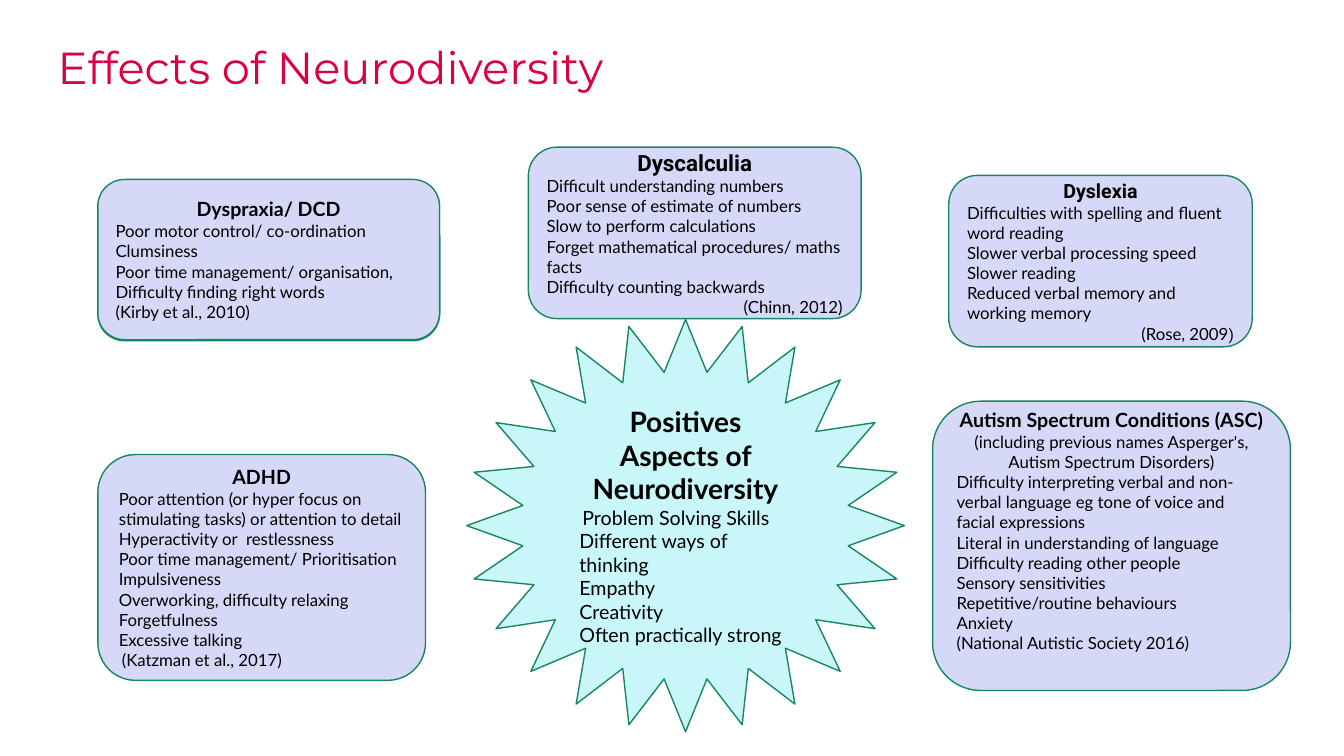
from pptx import Presentation
from pptx.dml.color import RGBColor
from pptx.enum.shapes import MSO_SHAPE
from pptx.enum.text import MSO_ANCHOR, MSO_AUTO_SIZE, PP_ALIGN
from pptx.util import Inches, Pt

LEFT, MID, RIGHT = PP_ALIGN.LEFT, PP_ALIGN.CENTER, PP_ALIGN.RIGHT
ROUND, STAR = MSO_SHAPE.ROUNDED_RECTANGLE, MSO_SHAPE.STAR_24_POINT
TOP, CENTRE = MSO_ANCHOR.TOP, MSO_ANCHOR.MIDDLE
FIXED = MSO_AUTO_SIZE.NONE
WIDTH, HEIGHT = Inches(13.33), Inches(7.5)
LILAC, AQUA, GREEN, EDGE = "D5D9F7", "C8F6F9", "21B782", "188760"
RED, BLACK = "DA0042", "000000"


def paint(hue):
    return RGBColor.from_string(hue)


def place(x, y, w, h):
    """Turn percentages of the slide into lengths."""
    return [round(share * side / 100)
            for share, side in zip((x, y, w, h), (WIDTH, HEIGHT) * 2)]


def add_title(slide, text, area):
    title = slide.shapes.title
    title.left, title.top, title.width, title.height = place(*area)
    frame = title.text_frame
    frame.text = text
    frame.auto_size = FIXED
    frame.vertical_anchor = TOP
    para = frame.paragraphs[0]
    para.alignment, para.line_spacing = LEFT, 1.2
    para.space_before = Pt(10)
    style(para.font, 32, "Montserrat", RED)


def style(font, size, name="Lato", hue=BLACK, bold=False):
    font.size, font.name, font.bold = Pt(size), name, bold
    font.color.rgb = paint(hue)


def add_shape(slide, kind, area, fill):
    shape = slide.shapes.add_shape(kind, *place(*area))
    shape.shadow.inherit = False
    shape.fill.solid()
    shape.fill.fore_color.rgb = paint(fill)
    shape.line.color.rgb = paint(EDGE)
    shape.line.width = Pt(1)
    return shape


def add_line(frame, text, size, align=LEFT):
    para = frame.add_paragraph()
    para.text, para.alignment = text, align
    style(para.font, size)
    return para


def add_card(slide, area, head, lines, kind=ROUND, fill=LILAC,
             sizes=(14, 12), face="Lato"):
    """Draw a shape with a bold heading and a list; return its text frame."""
    frame = add_shape(slide, kind, area, fill).text_frame
    frame.word_wrap = True
    frame.vertical_anchor = CENTRE
    first = frame.paragraphs[0]
    first.alignment = MID
    run = first.add_run()
    run.text = head
    style(run.font, sizes[0], face, bold=True)
    for line in lines:
        add_line(frame, line, sizes[1])
    return frame


def indent(para, gap):
    para._p.get_or_add_pPr().set("marL", str(Inches(gap)))


def main():
    deck = Presentation()
    deck.slide_width, deck.slide_height = WIDTH, HEIGHT
    slide = deck.slides.add_slide(deck.slide_layouts[5])
    add_title(slide, "Effects of Neurodiversity", (3.53, 3.2, 75.32, 14.53))

    # Left column
    add_shape(slide, ROUND, (7.28, 23.87, 25.43, 21.2), GREEN)
    add_card(slide, (7.28, 23.73, 25.43, 21.2), "Dyspraxia/ DCD", [
        "Poor motor control/ co-ordination",
        "Clumsiness",
        "Poor time management/ organisation,",
        "Difficulty finding right words",
        "(Kirby et al., 2010)"])
    adhd = add_card(slide, (7.28, 60.13, 24.38, 29.87), "ADHD", [
        "Poor attention (or hyper focus on stimulating tasks) "
        "or attention to detail",
        "Hyperactivity or  restlessness",
        "Poor time management/ Prioritisation",
        "Impulsiveness",
        "Overworking, difficulty relaxing",
        "Forgetfulness",
        "Excessive talking",
        "(Katzman et al., 2017)"])
    indent(adhd.paragraphs[-1], 0.03)

    # Right column, lower card: its text sits above the middle
    autism = add_card(slide, (69.39, 53.07, 26.63, 38.27),
                      "Autism Spectrum Conditions (ASC) ", [
        "Difficulty interpreting verbal and non-verbal language "
        "eg tone of voice and facial expressions",
        "Literal in understanding of language",
        "Difficulty reading other people",
        "Sensory sensitivities",
        "Repetitive/routine behaviours",
        "Anxiety",
        "(National Autistic Society 2016)"])
    autism.margin_bottom = Inches(0.35)
    names = autism.paragraphs[0].add_run()
    names.text = ("(including previous names Asperger's, "
                  "Autism Spectrum Disorders)")
    style(names.font, 12)

    # Top cards with the reference at the right
    maths = add_card(slide, (39.31, 19.47, 24.76, 22.67), "Dyscalculia", [
        "Difficult understanding numbers",
        "Poor sense of estimate of numbers",
        "Slow to perform calculations",
        "Forget mathematical procedures/ maths facts",
        "Difficulty counting backwards"], sizes=(16, 12), face="Roboto")
    add_line(maths, "(Chinn, 2012)", 12, RIGHT)
    words = add_card(slide, (70.59, 23.2, 22.58, 22.67), "Dyslexia", [
        "Difficulties with spelling and fluent word reading",
        "Slower verbal processing speed",
        "Slower reading",
        "Reduced verbal memory and working memory"], face="Roboto")
    close = add_line(words, "(Rose, 2009", 12, RIGHT).add_run()
    close.text = ")"
    style(close.font, 11, "Roboto")

    # Central star
    star = add_card(slide, (34.73, 42.27, 32.56, 54.53),
                    "Positives Aspects of Neurodiversity", [
        "Problem Solving Skills",
        "Different ways of thinking",
        "Empathy",
        "Creativity",
        "Often practically strong"], STAR, AQUA, (20, 14))
    indent(star.paragraphs[1], 0.03)

    deck.save("out.pptx")


if __name__ == "__main__":
    main()
